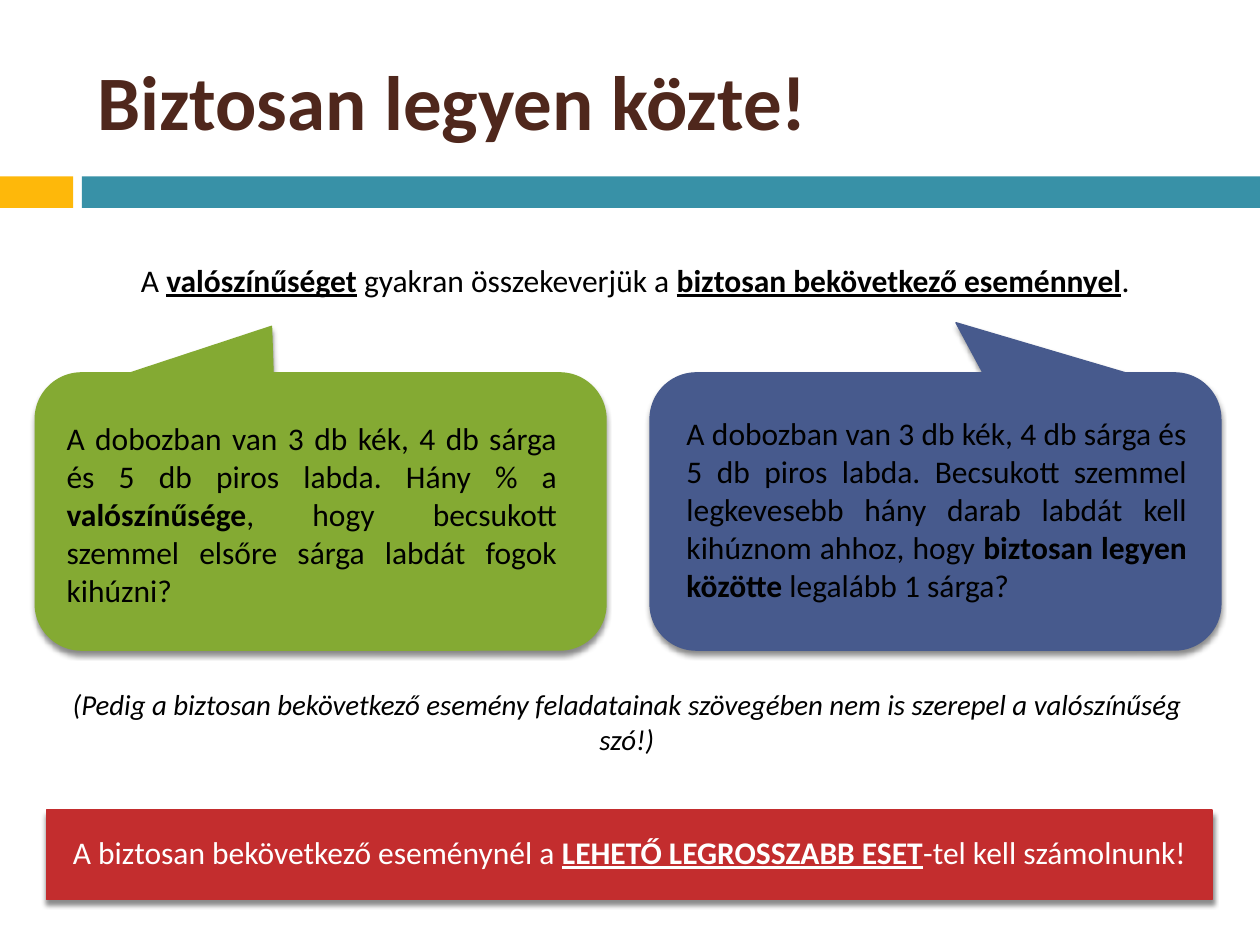
from dataclasses import dataclass

from lxml.etree import SubElement
from pptx import Presentation
from pptx.dml.color import RGBColor
from pptx.enum.shapes import MSO_SHAPE
from pptx.enum.text import MSO_ANCHOR, MSO_AUTO_SIZE, PP_ALIGN
from pptx.oxml.ns import qn
from pptx.util import Inches, Pt


@dataclass(frozen=True)
class Theme:
    font: str = "Calibri"
    head: float = 44
    body: float = 18
    note: float = 16.5
    edge: float = 0.79
    brown: str = "4F271C"
    gold: str = "FEB80A"
    teal: str = "3891A7"
    blue: str = "475A8D"
    green: str = "84AA33"
    red: str = "C32D2E"
    black: str = "000000"
    white: str = "FFFFFF"


THEME = Theme()


def write(frame, text, size=THEME.body, color=THEME.black, align=PP_ALIGN.LEFT,
          bold=False, italic=False, under=False):
    """Fill a frame; words between asterisks are bold, underlined on request."""
    par = frame.paragraphs[0]
    par.alignment = align
    for i, part in enumerate(text.split("*")):
        strong = i % 2 == 1
        run = par.add_run()
        run.text = part
        font = run.font
        font.name, font.size = THEME.font, Pt(size)
        font.color.rgb = RGBColor.from_string(color)
        font.bold, font.italic = bold or strong, italic
        font.underline = under and strong


class Deck:
    """Holds the style and the current slide; the grid is 100 columns by 75 rows."""
    cols, rows = 100, 75

    def __init__(self, theme):
        self.theme = theme
        self.prs = Presentation()
        self.prs.slide_width, self.prs.slide_height = Inches(10), Inches(7.5)
        self.slide = self.prs.slides.add_slide(self.prs.slide_layouts[5])

    def place(self, x, y, w, h):
        dx = self.prs.slide_width / self.cols
        dy = self.prs.slide_height / self.rows
        return round(x * dx), round(y * dy), round(w * dx), round(h * dy)

    def title(self, text, *cell):
        box = self.slide.shapes.title
        box.left, box.top, box.width, box.height = self.place(*cell)
        frame = box.text_frame
        frame.auto_size = MSO_AUTO_SIZE.NONE
        frame.vertical_anchor = MSO_ANCHOR.MIDDLE
        write(frame, text, self.theme.head, self.theme.brown, bold=True)

    def block(self, fill, *cell, kind=MSO_SHAPE.RECTANGLE, raised=True):
        shape = self.slide.shapes.add_shape(kind, *self.place(*cell))
        shape.shadow.inherit = False
        shape.fill.solid()
        shape.fill.fore_color.rgb = RGBColor.from_string(fill)
        if raised:
            shape.line.color.rgb = RGBColor.from_string(fill)
            shape.line.width = Pt(self.theme.edge)
            self.shade(shape)
        else:
            shape.line.fill.background()
        return shape

    def shade(self, shape):
        group = shape.element.spPr.find(qn("a:effectLst"))
        drop = SubElement(group, qn("a:outerShdw"), blurRad=str(Pt(3)),
                          dist=str(Pt(2.4)), dir="5400000", rotWithShape="0")
        tint = SubElement(drop, qn("a:srgbClr"), val=self.theme.black)
        SubElement(tint, qn("a:alpha"), val="45000")

    def bubble(self, fill, tip, *cell):
        shape = self.block(fill, *cell, kind=MSO_SHAPE.ROUNDED_RECTANGULAR_CALLOUT)
        for i, value in enumerate((*tip, 0.167)):
            shape.adjustments[i] = value

    def text(self, text, *cell, **style):
        frame = self.slide.shapes.add_textbox(*self.place(*cell)).text_frame
        frame.word_wrap = True
        frame.auto_size = MSO_AUTO_SIZE.SHAPE_TO_FIT_TEXT
        write(frame, text, **style)

    def banner(self, text, fill, *cell, **style):
        frame = self.block(fill, *cell).text_frame
        frame.word_wrap = True
        frame.vertical_anchor = MSO_ANCHOR.MIDDLE
        frame.margin_bottom = Inches(0.1)
        write(frame, text, **style)


def main():
    deck = Deck(THEME)

    # Heading and its two-part band
    deck.block(THEME.gold, 0, 14, 5.8, 2.5, raised=False)
    deck.block(THEME.teal, 6.5, 14, 93.5, 2.5, raised=False)
    deck.title("Biztosan legyen közte!", 6.7, 2.5, 89.2, 10.8)

    # Opening statement
    deck.text("A *valószínűséget* gyakran összekeverjük a "
              "*biztosan bekövetkező eseménnyel*.",
              10.2, 20.2, 81.9, 4, under=True)

    # The two sample tasks, each pointing at its term
    start = "A dobozban van 3 db kék, 4 db sárga és 5 db piros labda. "
    tasks = [
        (THEME.green, 2.8, (-0.086, -0.668), (4.3, 32.8, 40.9, 16.2),
         "Hány % a *valószínűsége*, hogy becsukott szemmel elsőre "
         "sárga labdát fogok kihúzni?"),
        (THEME.blue, 51.6, (0.036, -0.681), (53.5, 32.4, 41.7, 16.2),
         "Becsukott szemmel legkevesebb hány darab labdát kell kihúznom "
         "ahhoz, hogy *biztosan legyen közötte* legalább 1 sárga?"),
    ]
    for fill, left, tip, cell, task in tasks:
        deck.bubble(fill, tip, left, 29.6, 45.3, 22)
        deck.text(start + task, *cell, align=PP_ALIGN.JUSTIFY)

    # Remark and conclusion
    deck.text("(Pedig a biztosan bekövetkező esemény feladatainak szövegében "
              "nem is szerepel a valószínűség szó!)",
              3.5, 54, 92.5, 3.8, size=THEME.note, italic=True,
              align=PP_ALIGN.CENTER)
    deck.banner("A biztosan bekövetkező eseménynél a *LEHETŐ LEGROSSZABB ESET*"
                "-tel kell számolnunk!",
                THEME.red, 3.7, 64.3, 92.5, 7.1, color=THEME.white, under=True,
                align=PP_ALIGN.CENTER)

    deck.prs.save("out.pptx")


if __name__ == "__main__":
    main()
